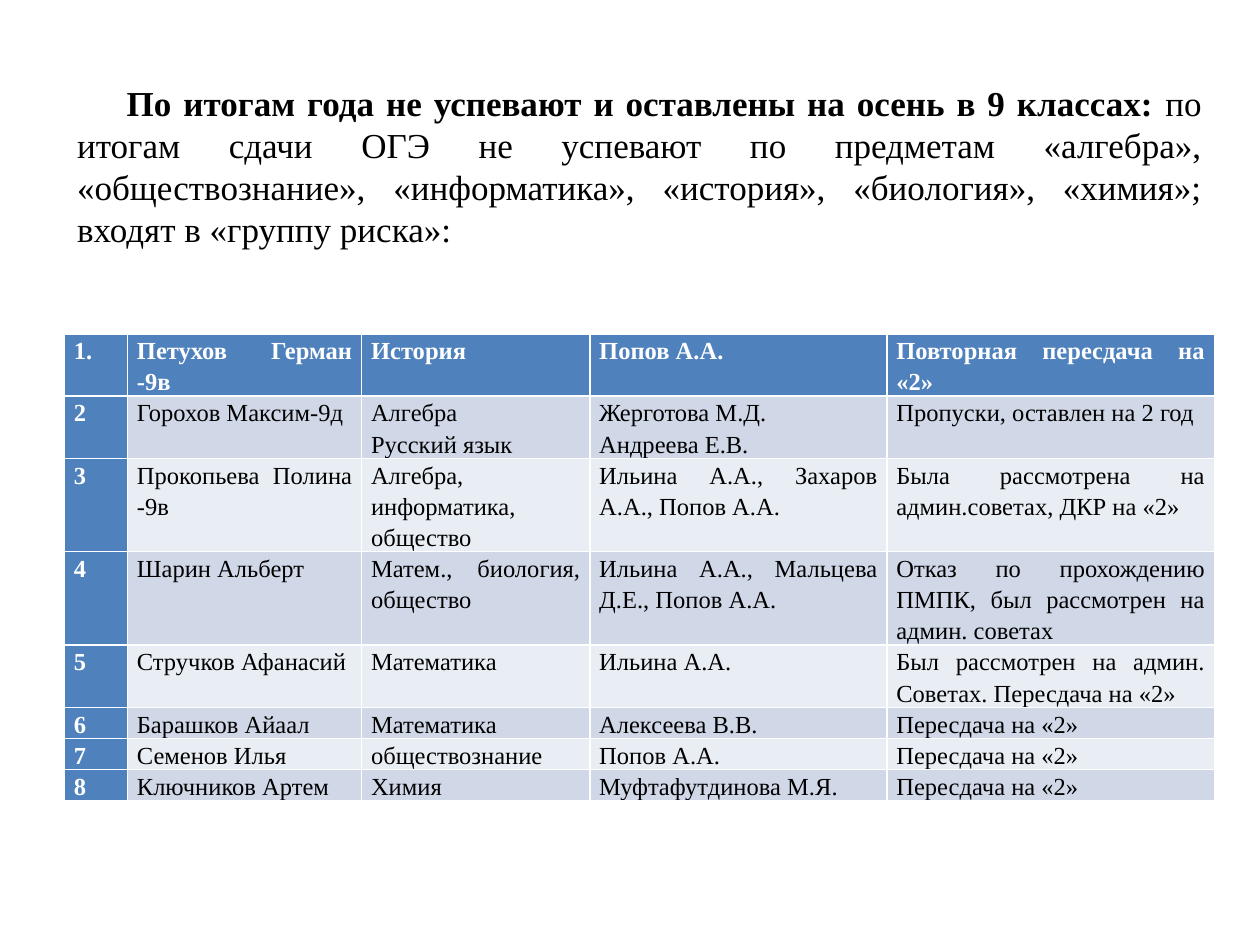
"""Build a slide listing the ninth-grade pupils who failed the year."""
from pptx import Presentation
from pptx.dml.color import RGBColor
from pptx.enum.text import MSO_ANCHOR as ANCHOR, MSO_AUTO_SIZE as AUTO, PP_ALIGN as ALIGN
from pptx.util import Cm, Pt


def rgb(value):
    return RGBColor.from_string(value)


def add_text(p, text, size=14, color="000000", bold=False, spacing=None):
    p.alignment = ALIGN.JUSTIFY
    p.line_spacing = spacing
    r = p.add_run()
    r.text = text
    r.font.name = "Times New Roman"
    r.font.size = Pt(size)
    r.font.bold = bold
    r.font.color.rgb = rgb(color)


rows = [
    ("1.", "Петухов Герман -9в", "История", "Попов А.А.", "Повторная пересдача на «2»"),
    ("2", "Горохов Максим-9д", "Алгебра\nРусский язык", "Жерготова М.Д.\nАндреева Е.В.",
     "Пропуски, оставлен на 2 год"),
    ("3", "Прокопьева Полина -9в", "Алгебра, информатика, общество",
     "Ильина А.А., Захаров А.А., Попов А.А.", "Была рассмотрена на админ.советах, ДКР на «2»"),
    ("4", "Шарин Альберт", "Матем., биология, общество",
     "Ильина А.А., Мальцева Д.Е., Попов А.А.",
     "Отказ по прохождению ПМПК, был рассмотрен на админ. советах"),
    ("5", "Стручков Афанасий", "Математика", "Ильина А.А.",
     "Был рассмотрен на админ. Советах. Пересдача на «2»"),
    ("6", "Барашков Айаал", "Математика", "Алексеева В.В.", "Пересдача на «2»"),
    ("7", "Семенов Илья", "обществознание", "Попов А.А.", "Пересдача на «2»"),
    ("8", "Ключников Артем", "Химия", "Муфтафутдинова М.Я.", "Пересдача на «2»"),
]
line_counts = [2, 2, 3, 3, 2, 1, 1, 1]
col_widths = [1.27, 4.72, 4.6, 5.99, 6.6]
line_height = 0.62
left, width = Cm(1.3), Cm(sum(col_widths))

prs = Presentation()
prs.slide_width, prs.slide_height = Cm(25.4), Cm(19.05)
s = prs.slides.add_slide(prs.slide_layouts[5])

title = s.shapes.title
title.left, title.top, title.width, title.height = left, Cm(1.52), width, Cm(4.52)
tf = title.text_frame
tf.word_wrap = True
tf.auto_size = AUTO.NONE
tf.vertical_anchor = ANCHOR.TOP
p = tf.paragraphs[0]
p._p.get_or_add_pPr().set("indent", str(Cm(1)))
add_text(p, "По итогам года не успевают и оставлены на осень в 9 классах:", size=20, bold=True)
add_text(p, " по итогам сдачи ОГЭ не успевают по предметам «алгебра», «обществознание», "
            "«информатика», «история», «биология», «химия»; входят в «группу риска»:", size=20)

frame = s.shapes.add_table(len(rows), len(col_widths), left, Cm(6.73), width,
                           Cm(line_height * sum(line_counts)))
table = frame.table
table.first_col = True
for col, col_width in zip(table.columns, col_widths):
    col.width = Cm(col_width)
for i, (row, lines) in enumerate(zip(rows, line_counts)):
    table.rows[i].height = Cm(line_height * lines)
    band = "D0D8E8" if i % 2 else "E9EDF4"
    for j, text in enumerate(row):
        cell = table.cell(i, j)
        header = i == 0 or j == 0
        cell.fill.solid()
        cell.fill.fore_color.rgb = rgb("4F81BD" if header else band)
        cell.margin_left = cell.margin_right = Cm(0.19)
        cell.margin_top = cell.margin_bottom = 0
        tf = cell.text_frame
        for k, line in enumerate(text.split("\n")):
            p = tf.add_paragraph() if k else tf.paragraphs[0]
            add_text(p, line, color="FFFFFF" if header else "000000", bold=header, spacing=1.15)

prs.save("out.pptx")
